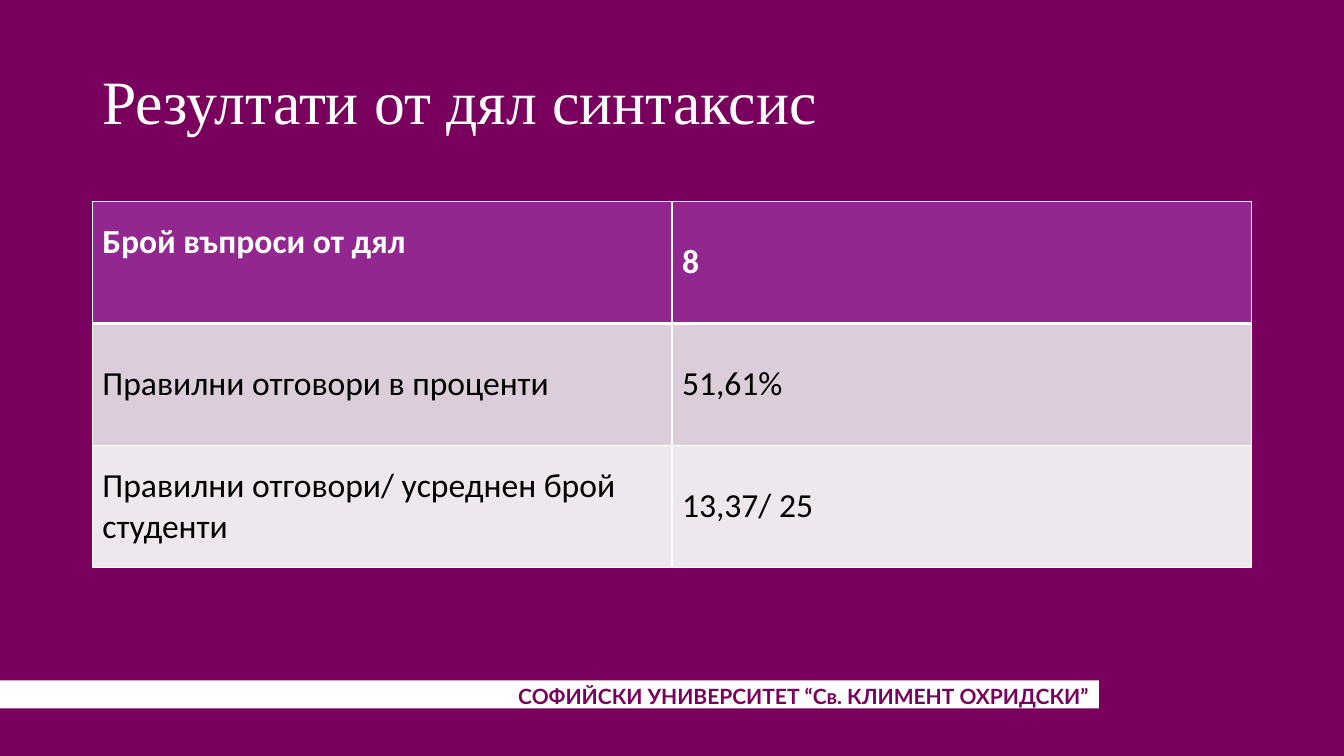
import pptx
import pptx.dml.color
import pptx.enum.shapes
import pptx.enum.text
import pptx.oxml
import pptx.oxml.ns
import pptx.util

Pt = pptx.util.Pt
RGB = pptx.dml.color.RGBColor
ALIGN = pptx.enum.text.PP_ALIGN
MIDDLE = pptx.enum.text.MSO_ANCHOR.MIDDLE

TITLE = "Резултати от дял синтаксис"
FOOTER = "СОФИЙСКИ УНИВЕРСИТЕТ “Св. КЛИМЕНТ ОХРИДСКИ”"
ROWS = [
    ("Брой въпроси от дял", "8"),
    ("Правилни отговори в проценти", "51,61%"),
    ("Правилни отговори/ усреднен брой студенти", "13,37/ 25"),
]

PLUM = RGB(0x7A, 0x00, 0x5E)
WHITE = RGB(0xFF, 0xFF, 0xFF)
BLACK = RGB(0x00, 0x00, 0x00)
FILLS = [RGB(0x92, 0x27, 0x8F), RGB(0xDC, 0xCD, 0xDB), RGB(0xEE, 0xE8, 0xEE)]

LEFT, TOP, WIDTH = 66, 144, 828
ROW_H = 87.12
LIFT = 32.9  # bottom margin that raises the first header text

HEAD = {"name": "Times New Roman", "size": Pt(44), "bold": False}
FOOT = {"name": "Lato", "size": Pt(15), "bold": True}
BODY = {"name": "Calibri", "size": Pt(24)}


def style(par, color, form):
    for key, value in form.items():
        setattr(par.font, key, value)
    par.font.color.rgb = color


def label(slide, box, text, color, form, align, anchor):
    frame = slide.shapes.add_textbox(*map(Pt, box)).text_frame
    frame.word_wrap = True
    frame.vertical_anchor = anchor
    par = frame.paragraphs[0]
    par.text, par.alignment = text, align
    style(par, color, form)
    return par


def border(cell, widths):
    """Draw white cell edges, given widths in points by side."""
    props = cell._tc.get_or_add_tcPr()
    for spot, (side, width) in enumerate(widths.items()):
        props.insert(spot, pptx.oxml.parse_xml(
            f'<a:ln{side} {pptx.oxml.ns.nsdecls("a")} w="{Pt(width)}">'
            f'<a:solidFill><a:srgbClr val="{WHITE}"/></a:solidFill></a:ln{side}>'))


def main():
    deck = pptx.Presentation()
    deck.slide_width, deck.slide_height = Pt(960), Pt(540)
    slide = deck.slides.add_slide(deck.slide_layouts[6])
    slide.background.fill.solid()
    slide.background.fill.fore_color.rgb = PLUM

    strip = slide.shapes.add_shape(
        pptx.enum.shapes.MSO_SHAPE.RECTANGLE, 0, Pt(486), Pt(785), Pt(20))
    strip.shadow.inherit = False
    strip.fill.solid()
    strip.fill.fore_color.rgb = WHITE
    strip.line.fill.background()

    label(slide, (255, 484.5, 530, 25.2), FOOTER, PLUM, FOOT,
          ALIGN.RIGHT, pptx.enum.text.MSO_ANCHOR.TOP)
    title = label(slide, (LEFT, 22.3, WIDTH, 104.4), TITLE, WHITE, HEAD,
                  ALIGN.LEFT, MIDDLE)
    title.line_spacing = 0.9

    table = slide.shapes.add_table(
        len(ROWS), 2, Pt(LEFT), Pt(TOP), Pt(WIDTH), Pt(ROW_H * len(ROWS))).table
    for r, texts in enumerate(ROWS):
        for c, text in enumerate(texts):
            cell = table.cell(r, c)
            cell.text = text
            cell.vertical_anchor = MIDDLE
            cell.fill.solid()
            cell.fill.fore_color.rgb = FILLS[r]
            style(cell.text_frame.paragraphs[0], BLACK if r else WHITE,
                  {**BODY, "bold": r == 0})
            border(cell, {"L": 1, "R": 1, "T": 3 if r == 1 else 1,
                          "B": 3 if r == 0 else 1})
    table.cell(0, 0).margin_bottom = Pt(LIFT)

    deck.save("out.pptx")


if __name__ == "__main__":
    main()
